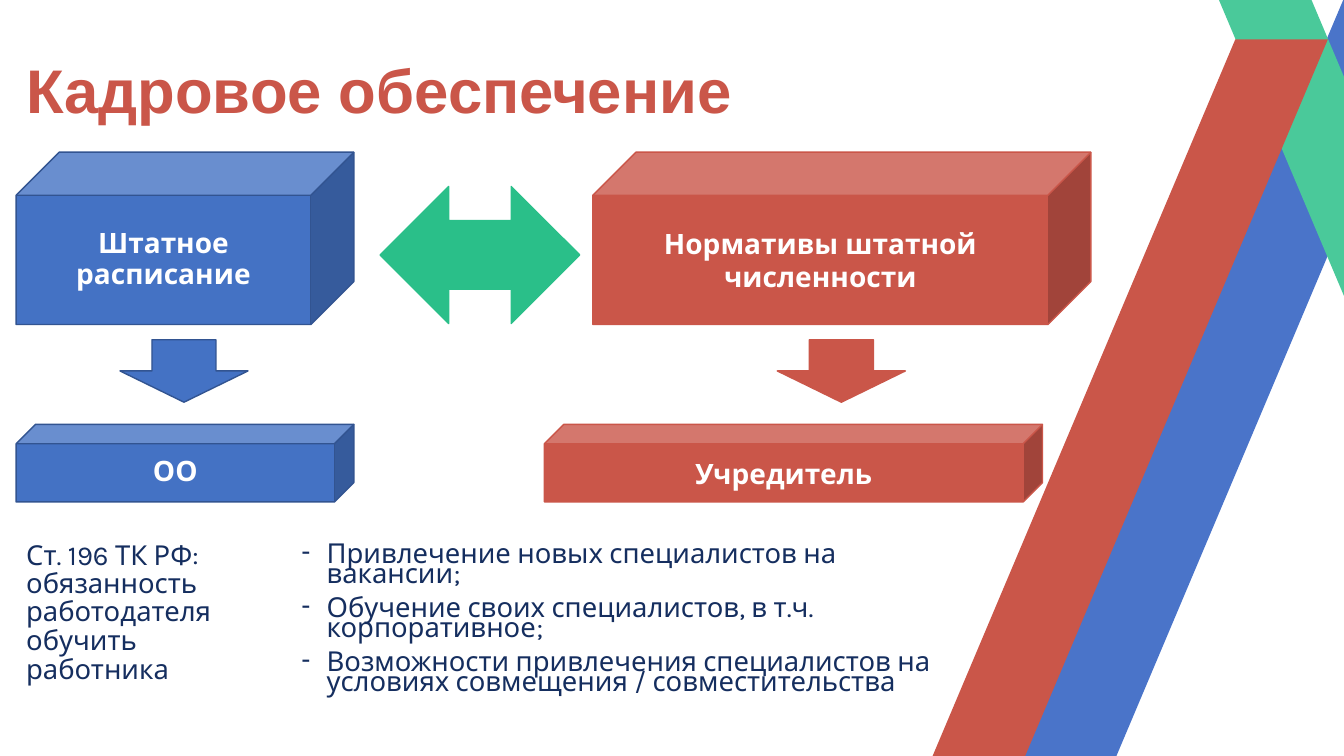
from lxml import etree
from pptx import Presentation
from pptx.dml.color import RGBColor
from pptx.enum.shapes import MSO_SHAPE
from pptx.enum.text import MSO_ANCHOR, MSO_AUTO_SIZE, PP_ALIGN
from pptx.oxml.ns import qn
from pptx.util import Inches, Pt

CUBE = MSO_SHAPE.CUBE
DOWN_ARROW = MSO_SHAPE.DOWN_ARROW
DOUBLE_ARROW = MSO_SHAPE.LEFT_RIGHT_ARROW
STRIPE = MSO_SHAPE.PARALLELOGRAM
TOP, MIDDLE = MSO_ANCHOR.TOP, MSO_ANCHOR.MIDDLE
LEFT, CENTER = PP_ALIGN.LEFT, PP_ALIGN.CENTER
NO_AUTOFIT = MSO_AUTO_SIZE.NONE

BLUE, BLUE_LINE = "4472C4", "325491"
RED, GREEN, NAVY, WHITE = "CA5649", "2ABF89", "152E5F", "FFFFFF"
STRIPE_BLUE, STRIPE_GREEN = "4A74C9", "4AC99A"
MARGIN = 0.16
STAFF_WIDTH, NORM_WIDTH = 3.35, 4.94
TEXT_TOP = 5.38


def color(hex_string):
    """Turn a hex string into a colour."""
    return RGBColor.from_string(hex_string)


def place(shape, left, top, width, height):
    """Move and size a shape, in inches."""
    shape.left, shape.top = Inches(left), Inches(top)
    shape.width, shape.height = Inches(width), Inches(height)


def set_bullet(paragraph, bullet, indent):
    """Give a paragraph a hanging bullet, or none."""
    properties = paragraph._p.get_or_add_pPr()
    properties.set("marL", str(Inches(indent)))
    properties.set("indent", str(-Inches(indent)))
    tag = "a:buChar" if bullet else "a:buNone"
    element = etree.SubElement(properties, qn(tag))
    if bullet:
        element.set("char", bullet)


def write(shape, lines, size=20, font="Karla", hex_color=WHITE, bold=False,
          align=LEFT, anchor=TOP, spacings=(1,), before=0, bullet=None, indent=0):
    """Write paragraphs; the last of the line spacings covers the rest."""
    frame = shape.text_frame
    frame.word_wrap = True
    frame.auto_size = NO_AUTOFIT
    frame.vertical_anchor = anchor
    for index, line in enumerate(lines):
        paragraph = frame.paragraphs[0] if index == 0 else frame.add_paragraph()
        paragraph.alignment = align
        paragraph.line_spacing = spacings[min(index, len(spacings) - 1)]
        paragraph.space_before = Pt(before)
        set_bullet(paragraph, bullet, indent)
        run = paragraph.add_run()
        run.text = line
        run.font.size, run.font.name, run.font.bold = Pt(size), font, bold
        run.font.color.rgb = color(hex_color)


def add_block(slide, kind, left, top, width, height, fill, line=None):
    """Add a flat preset shape with a fill and an optional outline."""
    shape = slide.shapes.add_shape(kind, 0, 0, 0, 0)
    place(shape, left, top, width, height)
    shape.shadow.inherit = False
    shape.fill.solid()
    shape.fill.fore_color.rgb = color(fill)
    if line:
        shape.line.color.rgb = color(line)
        shape.line.width = Pt(1)
    else:
        shape.line.fill.background()
    return shape


def add_stripe(slide, left, top, fill, flipped=False):
    """Add one slanted stripe of the right-hand decoration."""
    stripe = add_block(slide, STRIPE, left, top, 4.25, 7.89, fill)
    stripe.adjustments[0] = 0.784
    if flipped:
        stripe._element.spPr.xfrm.set("flipH", "1")


def add_cube(slide, left, top, width, height, fill, line, label, spacing):
    """Add a cube with a centred bold label."""
    cube = add_block(slide, CUBE, left, top, width, height, fill, line)
    write(cube, [label], bold=True, align=CENTER, anchor=MIDDLE, spacings=(spacing,))


def main():
    """Build the staffing slide."""
    presentation = Presentation()
    presentation.slide_width, presentation.slide_height = Inches(13.33), Inches(7.5)
    slide = presentation.slides.add_slide(presentation.slide_layouts[3])
    title, duty, measures = slide.placeholders

    add_stripe(slide, 9.99, 0, STRIPE_BLUE)
    add_stripe(slide, 12.09, 0, STRIPE_GREEN, flipped=True)
    add_stripe(slide, 8.92, 0.39, RED)

    place(title, MARGIN, 0.2, 9.77, 1.45)
    write(title, ["Кадровое обеспечение"], size=44, font="Arial", hex_color=RED,
          bold=True, anchor=MIDDLE, spacings=(0.9,))
    place(duty, MARGIN, TEXT_TOP, 2.5, 1.76)
    write(duty, ["Ст. 196 ТК РФ:", "обязанность работодателя обучить", "работника"],
          size=19.6, hex_color=NAVY, spacings=(0.7, 0.87))
    place(measures, 2.89, TEXT_TOP, 6.77, 1.82)
    write(measures,
          ["Привлечение новых специалистов на вакансии;",
           "Обучение своих специалистов, в т.ч. корпоративное;",
           "Возможности привлечения специалистов на условиях совмещения / совместительства"],
          size=19.6, hex_color=NAVY, spacings=(0.61,), before=10, bullet="-", indent=0.25)

    columns = [
        (BLUE, BLUE_LINE, STAFF_WIDTH, 0.9, 1.19,
         (MARGIN, "Штатное расписание"), (MARGIN, "ОО")),
        (RED, RED, NORM_WIDTH, 1, 7.71,
         (5.88, "Нормативы штатной численности"), (5.4, "Учредитель")),
    ]
    for fill, line, width, spacing, arrow_left, document, owner in columns:
        for (left, label), top, height in ((document, 1.51, 1.71), (owner, 4.21, 0.77)):
            add_cube(slide, left, top, width, height, fill, line, label, spacing)
        add_block(slide, DOWN_ARROW, arrow_left, 3.37, 1.27, 0.62, fill, line)
    add_block(slide, DOUBLE_ARROW, 3.77, 1.85, 1.98, 1.36, GREEN, GREEN)

    presentation.save("out.pptx")


if __name__ == "__main__":
    main()
